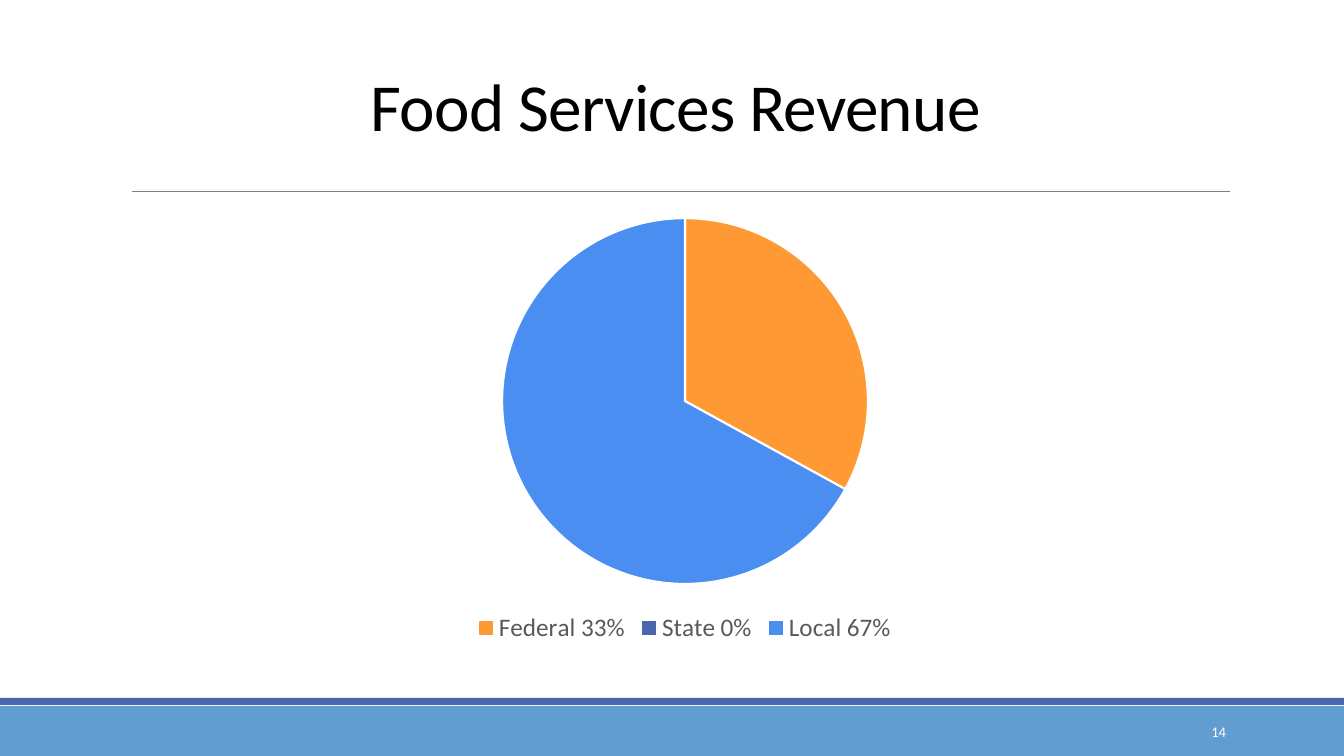
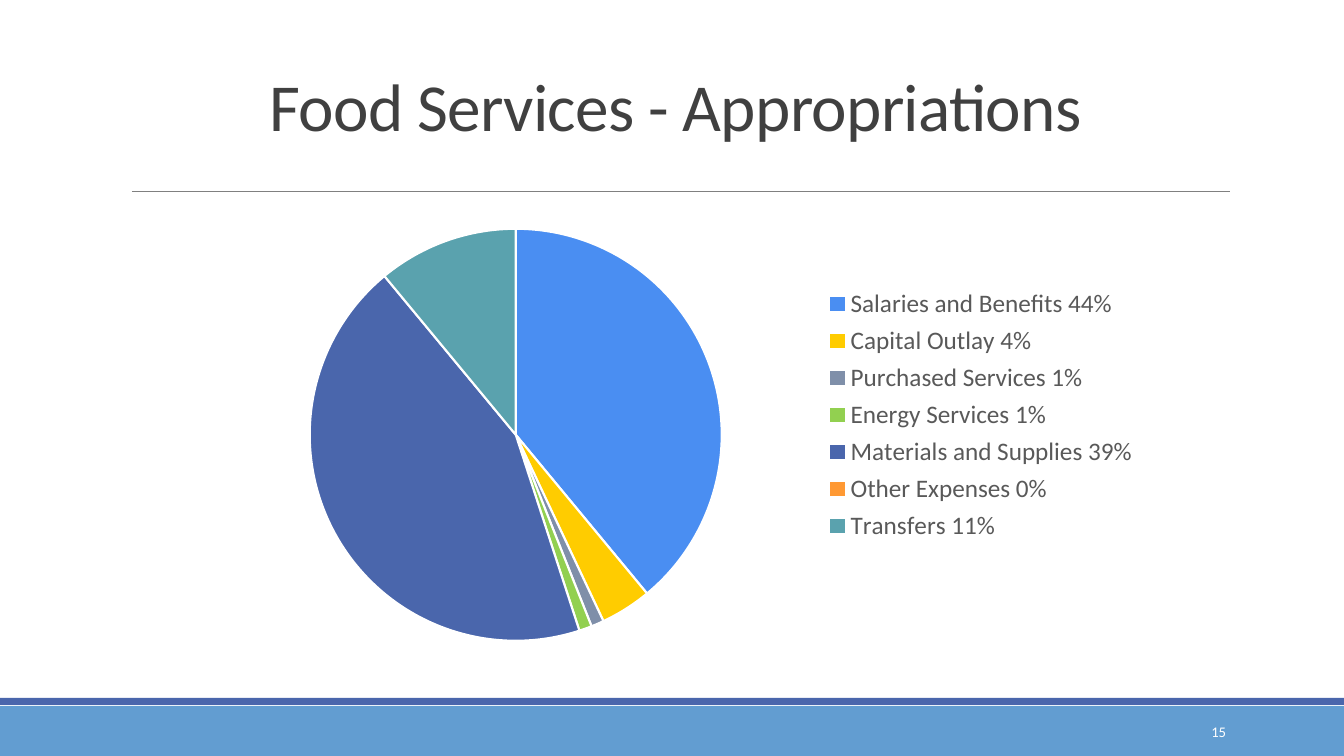
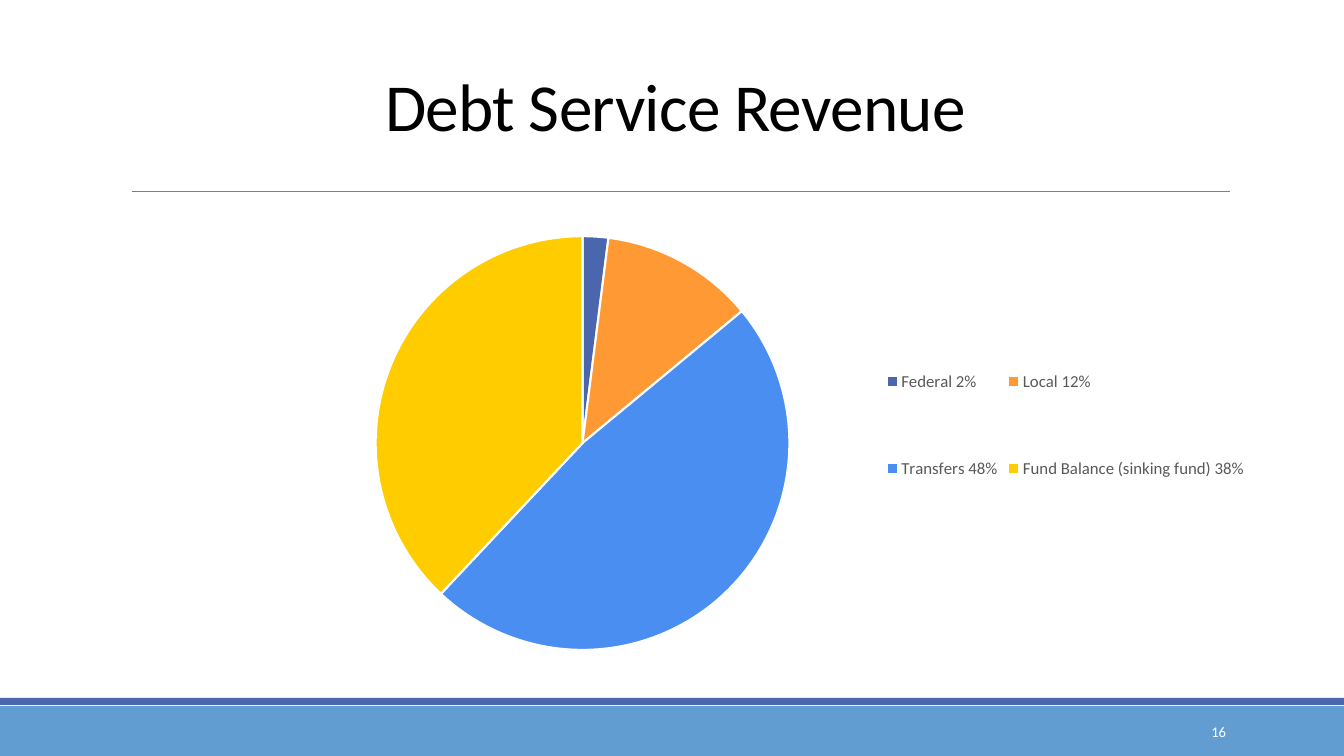
from pptx import Presentation
from pptx.chart.data import CategoryChartData
from pptx.dml.color import RGBColor
from pptx.enum.chart import XL_CHART_TYPE, XL_LEGEND_POSITION
from pptx.enum.shapes import MSO_CONNECTOR, MSO_SHAPE
from pptx.enum.text import MSO_ANCHOR, PP_ALIGN
from pptx.oxml import parse_xml
from pptx.oxml.ns import nsdecls, qn
from pptx.util import Pt

PX = 12192000 / 1344
FONT = "Calibri"
PIE = XL_CHART_TYPE.PIE
RIGHT, BOTTOM = XL_LEGEND_POSITION.RIGHT, XL_LEGEND_POSITION.BOTTOM
RECT, LINE = MSO_SHAPE.RECTANGLE, MSO_CONNECTOR.STRAIGHT
MIDDLE = MSO_ANCHOR.MIDDLE

HEX = {
    "black": "000000", "dark": "404040", "grey": "595959", "rule": "808080",
    "white": "FFFFFF", "sky": "629DD1", "navy": "4A66AC", "blue": "4A8EF2",
    "orange": "FF9933", "gold": "FFCC00", "slate": "7F8FA9",
    "green": "92D050", "teal": "5AA2AE",
}
RGB = {name: RGBColor.from_string(code) for name, code in HEX.items()}

# Boxes are left, top, width, height; slices are label, value, colour.
SLIDES = [
    {"title": "Food Services Revenue", "ink": "black",
     "box": (121, 204, 1127, 444), "plot": (502, 218, 366, 366),
     "side": BOTTOM, "key": None, "size": 18,
     "slices": [("Federal 33%", 33, "orange"),
                ("State 0%", 0, "navy"),
                ("Local 67%", 67, "blue")]},
    {"title": "Food Services - Appropriations", "ink": "dark",
     "box": (121, 204, 1109, 444), "plot": (309, 229, 412, 412),
     "side": RIGHT, "key": (822, 282, 318, 266), "size": 18,
     "slices": [("Salaries and Benefits 44%", 39, "blue"),
                ("Capital Outlay 4%", 4, "gold"),
                ("Purchased Services 1%", 1, "slate"),
                ("Energy Services 1%", 1, "green"),
                ("Materials and Supplies 39%", 44, "navy"),
                ("Other Expenses 0%", 0, "orange"),
                ("Transfers 11%", 11, "teal")]},
    {"title": "Debt Service Revenue", "ink": "black",
     "box": (106, 222, 1208, 444), "plot": (375, 236, 414, 414),
     "side": RIGHT, "key": (882, 305, 368, 240), "size": 12,
     "slices": [("Federal 2%", 2, "navy"),
                ("Local 12%", 12, "orange"),
                ("Transfers 48%", 48, "blue"),
                ("Fund Balance (sinking fund) 38%", 38, "gold")]},
]


def write(slide, text, box, size, ink, align, lead=None, track=None):
    frame = slide.shapes.add_textbox(*[round(n * PX) for n in box]).text_frame
    frame.word_wrap = True
    frame.vertical_anchor = MIDDLE
    para = frame.paragraphs[0]
    para.alignment = align
    para.line_spacing = lead
    run = para.add_run()
    run.text = text
    run.font.name, run.font.size = FONT, Pt(size)
    run.font.color.rgb = RGB[ink]
    if track:
        run._r.get_or_add_rPr().set("spc", str(track))


def place(node, index, part, box, inner=""):
    """Give a chart part a fixed layout, as fractions of the chart's box."""
    for old in node.findall(qn("c:layout")):
        node.remove(old)
    left, top, wide, high = box
    x, y = (part[0] - left) / wide, (part[1] - top) / high
    w, h = part[2] / wide, part[3] / high
    node.insert(index, parse_xml(
        f'<c:layout {nsdecls("c")}><c:manualLayout>{inner}'
        '<c:xMode val="edge"/><c:yMode val="edge"/>'
        f'<c:x val="{x:.3f}"/><c:y val="{y:.3f}"/>'
        f'<c:w val="{w:.3f}"/><c:h val="{h:.3f}"/>'
        '</c:manualLayout></c:layout>'))


deck = Presentation()
deck.slide_width, deck.slide_height = round(1344 * PX), round(756 * PX)

for page, item in enumerate(SLIDES, 14):
    slide = deck.slides.add_slide(deck.slide_layouts[6])

    for top, high, tint in [(706, 50, "sky"), (698, 7, "navy")]:
        band = slide.shapes.add_shape(
            RECT, 0, round(top * PX), deck.slide_width, round(high * PX))
        band.shadow.inherit = False
        band.fill.solid()
        band.fill.fore_color.rgb = RGB[tint]
        band.line.fill.background()

    rule = slide.shapes.add_connector(
        LINE, *[round(n * PX) for n in (132, 191, 1230, 191)])
    rule.line.color.rgb = RGB["rule"]
    rule.line.width = Pt(0.5)
    rule._element.spPr.append(parse_xml(f'<a:effectLst {nsdecls("a")}/>'))

    write(slide, item["title"], (121, 31, 1109, 160), size=48,
          ink=item["ink"], align=PP_ALIGN.CENTER, lead=0.85, track=-50)

    labels, values, tints = zip(*item["slices"])
    data = CategoryChartData()
    data.categories = labels
    data.add_series("Series 1", values)
    box = item["box"]
    chart = slide.shapes.add_chart(
        PIE, *[round(n * PX) for n in box], data).chart
    chart.has_title = False
    chart.font.name, chart.font.size = FONT, Pt(10)
    chart.font.color.rgb = RGB["black"]
    chart.plots[0].vary_by_categories = True
    for i, tint in enumerate(tints):
        look = chart.plots[0].series[0].points[i].format
        look.fill.solid()
        look.fill.fore_color.rgb = RGB[tint]
        look.line.color.rgb = RGB["white"]
        look.line.width = Pt(1.5)

    chart.has_legend = True
    key = chart.legend
    key.position = item["side"]
    key.include_in_layout = False
    key.font.name, key.font.size = FONT, Pt(item["size"])
    key.font.color.rgb = RGB["grey"]

    area = chart._chartSpace.chart.plotArea
    place(area, 0, item["plot"], box, '<c:layoutTarget val="inner"/>')
    if item["key"]:
        place(key._element, 1, item["key"], box)

    write(slide, str(page), (1092, 712, 144, 40), size=10.5,
          ink="white", align=PP_ALIGN.RIGHT)

deck.save("out.pptx")
